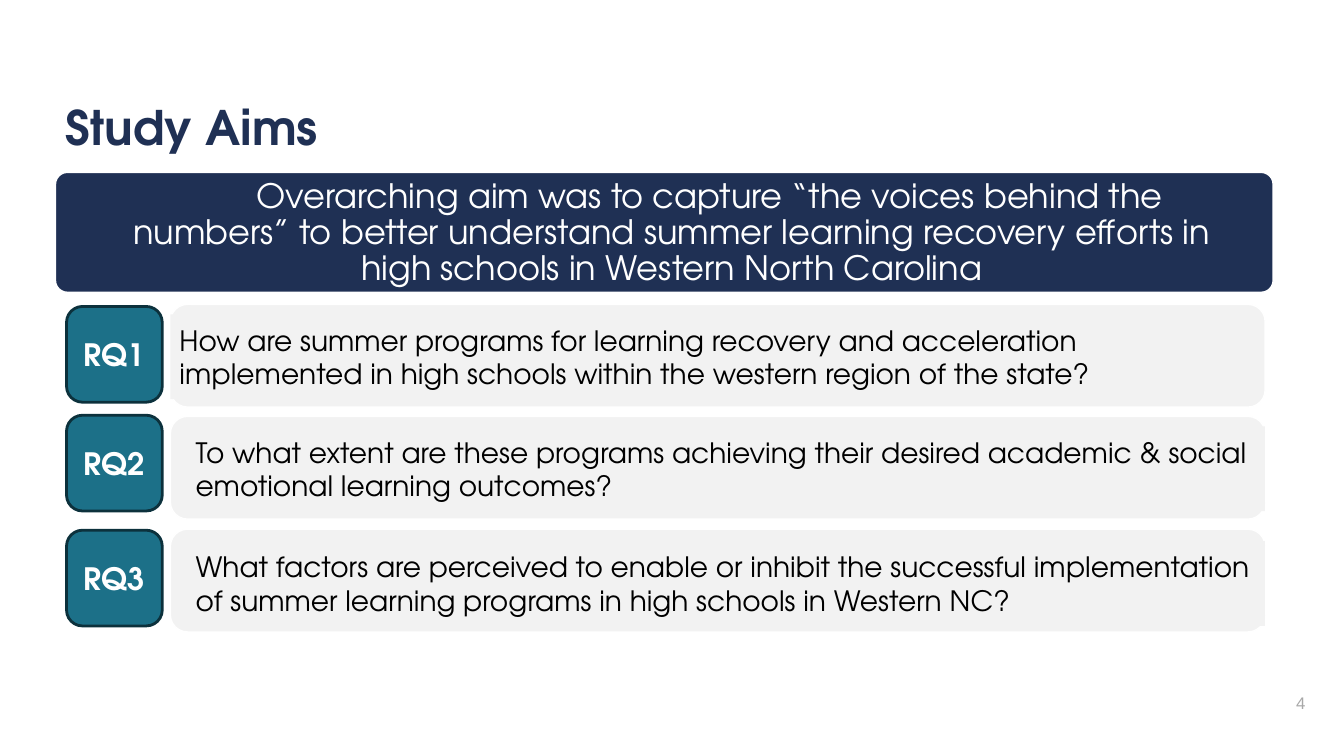
from pptx import Presentation
from pptx import util as u
from pptx.dml import color
from pptx.enum import shapes, text

FONT = "TeX Gyre Adventor"
NAVY, TEAL, DARK_TEAL = "1F3054", "1C7088", "0C313C"
GREY, WHITE, BLACK = "F2F2F2", "FFFFFF", "000000"
MIDDLE = text.MSO_ANCHOR.MIDDLE
LEFT, CENTER, RIGHT = text.PP_ALIGN.LEFT, text.PP_ALIGN.CENTER, text.PP_ALIGN.RIGHT

# label, label top, panel top, question left, question top, question
QUESTIONS = [
    ("RQ1", 218.9, 217.4, 121.7, 224.6,
     "How are summer programs for learning recovery and acceleration "
     "implemented in high schools within the western region of the state?"),
    ("RQ2", 296.6, 297.4, 133.2, 304.6,
     "To what extent are these programs achieving their desired academic & social "
     "emotional learning outcomes?"),
    ("RQ3", 378.7, 378, 133.2, 386.6,
     "What factors are perceived to enable or inhibit the successful implementation "
     "of summer learning programs in high schools in Western NC?"),
]


def rgb(value):
    return color.RGBColor.from_string(value)


def add_block(slide, kind, box, fill, line=None, line_width=1, corner=None):
    shape = slide.shapes.add_shape(kind, *map(u.Pt, box))
    shape.shadow.inherit = False
    shape.fill.solid()
    shape.fill.fore_color.rgb = rgb(fill)
    if line:
        shape.line.color.rgb = rgb(line)
        shape.line.width = u.Pt(line_width)
    else:
        shape.line.fill.background()
    if corner:
        shape.adjustments[0] = corner
    return shape


def set_text(shape, words, size, ink, align=LEFT, bold=False, font=FONT,
             anchor=MIDDLE, margins=(7.2, 3.6)):
    frame = shape.text_frame
    frame.word_wrap = True
    frame.vertical_anchor = anchor
    frame.margin_left = frame.margin_right = u.Pt(margins[0])
    frame.margin_top = frame.margin_bottom = u.Pt(margins[1])
    frame.text = words
    paragraph = frame.paragraphs[0]
    paragraph.alignment = align
    run_font = paragraph.runs[0].font
    run_font.name, run_font.size, run_font.bold = font, u.Pt(size), bold
    run_font.color.rgb = rgb(ink)
    return paragraph


def add_text(slide, box, words, size, ink, **options):
    return set_text(slide.shapes.add_textbox(*map(u.Pt, box)), words, size, ink, **options)


def add_question(slide, label, label_top, panel_top, left, top, question):
    rounded, plain = shapes.MSO_SHAPE.ROUNDED_RECTANGLE, shapes.MSO_SHAPE.RECTANGLE
    add_block(slide, rounded, (121.7, panel_top, 782, 73.4), GREY, WHITE)
    body = add_block(slide, plain, (left, top, 770.4, 60.5), GREY)
    set_text(body, question, 20, BLACK, margins=(6.5, 6.5))
    badge = add_block(slide, rounded, (47.5, label_top, 68.4, 68.4), TEAL, DARK_TEAL, 2)
    set_text(badge, label, 22, WHITE, align=CENTER, bold=True)


def main():
    presentation = Presentation()
    presentation.slide_width, presentation.slide_height = u.Pt(960), u.Pt(540)
    slide = presentation.slides.add_slide(presentation.slide_layouts[6])

    # Title
    add_text(slide, (39.6, 66.2, 881.3, 56.9), "Study Aims", 34, NAVY,
             bold=True, anchor=text.MSO_ANCHOR.TOP)

    # Overarching aim, with an indented first line
    add_block(slide, shapes.MSO_SHAPE.ROUNDED_RECTANGLE, (39.6, 123.1, 869.8, 85.7),
              NAVY, WHITE, corner=0.1)
    aim = add_text(slide, (72.7, 131, 814.3, 72),
                   "Overarching aim was to capture “the voices behind the numbers” "
                   "to better understand summer learning recovery efforts in high schools "
                   "in Western North Carolina", 24, WHITE, align=CENTER, margins=(4.3, 2.9))
    aim.line_spacing = 0.9
    properties = aim._p.get_or_add_pPr()
    properties.set("marL", "0")
    properties.set("indent", str(u.Pt(54)))

    # Research questions
    for question in QUESTIONS:
        add_question(slide, *question)

    # Slide number
    add_text(slide, (726.5, 492.5, 213.1, 19.4), "4", 12, "A8A8A8", align=RIGHT, font="Arial")

    presentation.save("out.pptx")


if __name__ == "__main__":
    main()
